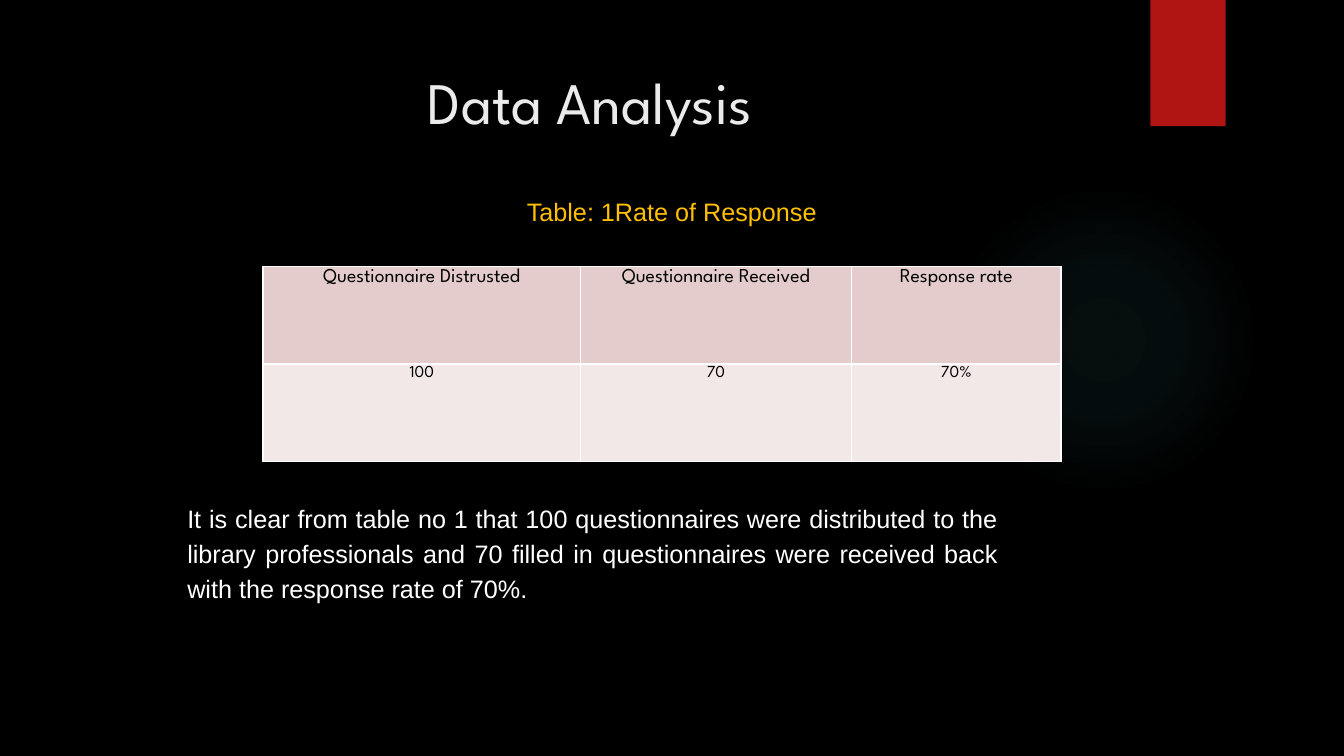
from lxml import etree
from pptx import Presentation
from pptx.dml.color import RGBColor
from pptx.enum.shapes import MSO_SHAPE
from pptx.enum.text import MSO_ANCHOR, PP_ALIGN
from pptx.oxml import parse_xml
from pptx.oxml.ns import nsdecls, qn
from pptx.util import Cm, Pt

BLACK = RGBColor(0x00, 0x00, 0x00)
WHITE = RGBColor(0xFF, 0xFF, 0xFF)
PALE = RGBColor(0xEB, 0xEB, 0xEB)
AMBER = RGBColor(0xFF, 0xC0, 0x00)
RED = RGBColor(0xB0, 0x15, 0x13)
TEAL = RGBColor(0x50, 0xB9, 0xC1)
HEADER_PINK = RGBColor(0xE4, 0xCC, 0xCC)
BODY_PINK = RGBColor(0xF2, 0xE8, 0xE7)
HEADING_FONT, TEXT_FONT = "League Spartan", "Arial"

TITLE = "Data Analysis"
CAPTION = "Table: 1Rate of Response"
FINDING = (
    "It is clear from table no 1 that 100 questionnaires were distributed to the "
    "library professionals and 70 filled in questionnaires were received back "
    "with the response rate of 70%."
)
# cell texts, text size, fill
RESPONSE_ROWS = [
    (("Questionnaire Distrusted", "Questionnaire Received", "Response rate"), 14, HEADER_PINK),
    (("100", "70", "70%"), 12, BODY_PINK),
]
COLUMN_WIDTHS = (8.0, 6.83, 5.28)
ROW_HEIGHT = 2.46
GLOW_STOPS = [(0, 7), (36, 6), (69, 0)]  # position and opacity, percent


def write(frame, text, size, font, color, align, spacing=1.15):
    frame.word_wrap = True
    paragraph = frame.paragraphs[0]
    paragraph.alignment = align
    paragraph.line_spacing = spacing
    run = paragraph.add_run()
    run.text = text
    run.font.size = Pt(size)
    run.font.name = font
    run.font.color.rgb = color


def add_block(slide, box, *style, anchor=MSO_ANCHOR.TOP, **spacing):
    frame = slide.shapes.add_textbox(*map(Cm, box)).text_frame
    frame.vertical_anchor = anchor
    write(frame, *style, **spacing)


def add_decor(slide, kind, box, color):
    decor = slide.shapes.add_shape(kind, *map(Cm, box))
    decor.shadow.inherit = False
    decor.line.fill.background()
    decor.fill.solid()
    decor.fill.fore_color.rgb = color
    return decor


def make_glow(decor, color):
    """Replace the solid fill by a radial one that fades out."""
    stops = "".join(
        f'<a:gs pos="{pos * 1000}"><a:srgbClr val="{color}">'
        f'<a:alpha val="{opacity * 1000}"/></a:srgbClr></a:gs>'
        for pos, opacity in GLOW_STOPS
    )
    gradient = parse_xml(
        f'<a:gradFill {nsdecls("a")}><a:gsLst>{stops}</a:gsLst><a:path path="circle">'
        '<a:fillToRect l="50000" t="50000" r="50000" b="50000"/></a:path></a:gradFill>'
    )
    properties = decor.fill._xPr
    properties.replace(properties.find(qn("a:solidFill")), gradient)


def add_borders(cell, color):
    properties = cell._tc.get_or_add_tcPr()
    for index, side in enumerate(("lnL", "lnR", "lnT", "lnB")):
        border = etree.Element(qn(f"a:{side}"), w=str(Pt(1)))
        fill = etree.SubElement(border, qn("a:solidFill"))
        etree.SubElement(fill, qn("a:srgbClr"), val=str(color))
        properties.insert(index, border)


def add_response_table(slide, left, top):
    table = slide.shapes.add_table(
        len(RESPONSE_ROWS), len(COLUMN_WIDTHS), Cm(left), Cm(top),
        Cm(sum(COLUMN_WIDTHS)), Cm(ROW_HEIGHT * len(RESPONSE_ROWS)),
    ).table
    for column, width in zip(table.columns, COLUMN_WIDTHS):
        column.width = Cm(width)
    for row, (texts, size, fill) in zip(table.rows, RESPONSE_ROWS):
        row.height = Cm(ROW_HEIGHT)
        for cell, text in zip(row.cells, texts):
            cell.margin_left = cell.margin_right = Cm(0.18)
            cell.margin_top = cell.margin_bottom = 0
            cell.fill.solid()
            cell.fill.fore_color.rgb = fill
            add_borders(cell, WHITE)
            write(cell.text_frame, text, size, HEADING_FONT, BLACK, PP_ALIGN.CENTER)


def main():
    deck = Presentation()
    deck.slide_width, deck.slide_height = Cm(33.87), Cm(19.05)
    slide = deck.slides.add_slide(deck.slide_layouts[6])
    slide.background.fill.solid()
    slide.background.fill.fore_color.rgb = BLACK

    glow = add_decor(slide, MSO_SHAPE.OVAL, (23.9, 4.65, 7.82, 7.82), TEAL)
    make_glow(glow, TEAL)
    add_decor(slide, MSO_SHAPE.RECTANGLE, (28.99, 0, 1.9, 3.18), RED)

    add_block(slide, (1.8, 1.27, 26.14, 2.54), TITLE, 42, HEADING_FONT, PALE,
              PP_ALIGN.CENTER, anchor=MSO_ANCHOR.MIDDLE, spacing=1.0)
    add_response_table(slide, 6.63, 6.71)
    add_block(slide, (12.7, 4.7, 8.46, 1.09), CAPTION, 18, TEXT_FONT, AMBER, PP_ALIGN.CENTER)
    add_block(slide, (4.47, 12.45, 20.93, 3.0), FINDING, 18, TEXT_FONT, WHITE, PP_ALIGN.JUSTIFY)

    deck.save("out.pptx")


if __name__ == "__main__":
    main()
